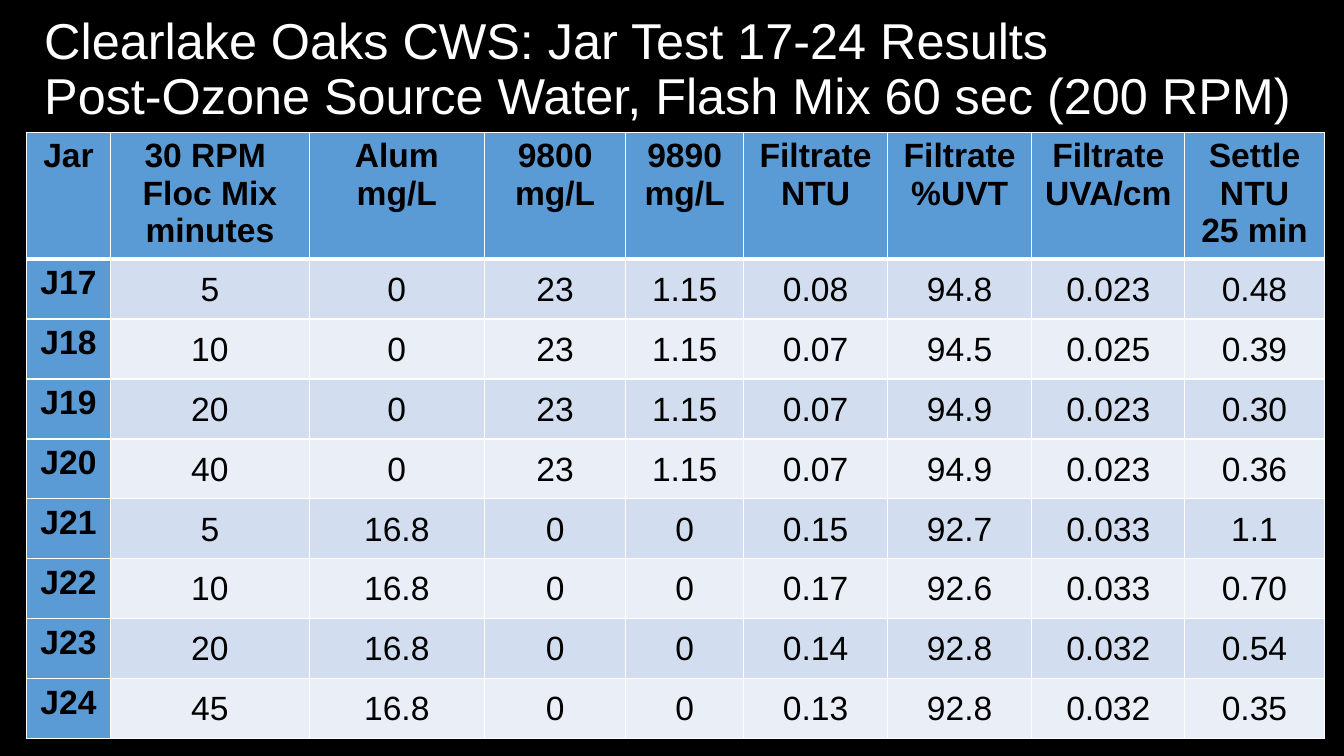
from lxml import etree
from pptx import Presentation
from pptx.dml.color import RGBColor
from pptx.enum.text import MSO_ANCHOR, PP_ALIGN
from pptx.oxml.ns import qn
from pptx.util import Cm, Pt

TITLE_LINES = [
    "Clearlake Oaks CWS: Jar Test 17-24 Results",
    "Post-Ozone Source Water, Flash Mix 60 sec (200 RPM)",
]
HEADERS = [
    ["Jar"],
    ["30 RPM ", "Floc Mix", "minutes"],
    ["Alum", "mg/L"],
    ["9800", "mg/L"],
    ["9890", "mg/L"],
    ["Filtrate", "NTU"],
    ["Filtrate", "%UVT"],
    ["Filtrate", "UVA/cm"],
    ["Settle", "NTU", "25 min"],
]
RESULTS = [
    ["J17", "5", "0", "23", "1.15", "0.08", "94.8", "0.023", "0.48"],
    ["J18", "10", "0", "23", "1.15", "0.07", "94.5", "0.025", "0.39"],
    ["J19", "20", "0", "23", "1.15", "0.07", "94.9", "0.023", "0.30"],
    ["J20", "40", "0", "23", "1.15", "0.07", "94.9", "0.023", "0.36"],
    ["J21", "5", "16.8", "0", "0", "0.15", "92.7", "0.033", "1.1"],
    ["J22", "10", "16.8", "0", "0", "0.17", "92.6", "0.033", "0.70"],
    ["J23", "20", "16.8", "0", "0", "0.14", "92.8", "0.032", "0.54"],
    ["J24", "45", "16.8", "0", "0", "0.13", "92.8", "0.032", "0.35"],
]
COLUMN_WIDTHS = [2.13, 5, 4.42, 3.56, 2.97, 3.63, 3.63, 3.86, 3.51]
HEADER_HEIGHT = 3.2
RESULT_HEIGHT = 1.51

FONT = "Arial"
BLACK = RGBColor(0x00, 0x00, 0x00)
WHITE = RGBColor(0xFF, 0xFF, 0xFF)
HEADER_BLUE = RGBColor(0x5B, 0x9B, 0xD5)
BANDS = [RGBColor(0xD2, 0xDE, 0xEF), RGBColor(0xEA, 0xEF, 0xF7)]
CENTER = PP_ALIGN.CENTER
TOP = MSO_ANCHOR.TOP
MIDDLE = MSO_ANCHOR.MIDDLE


def add_run(paragraph, text, size, color, bold=False):
    run = paragraph.add_run()
    run.text = text
    run.font.name = FONT
    run.font.size = Pt(size)
    run.font.bold = bold
    run.font.color.rgb = color


def set_borders(cell, top_width, bottom_width):
    properties = cell._tc.get_or_add_tcPr()
    widths = [("a:lnL", 1), ("a:lnR", 1), ("a:lnT", top_width), ("a:lnB", bottom_width)]
    for position, (tag, width) in enumerate(widths):
        line = etree.Element(qn(tag), w=str(Pt(width)))
        fill = etree.SubElement(line, qn("a:solidFill"))
        etree.SubElement(fill, qn("a:srgbClr"), val=str(WHITE))
        properties.insert(position, line)


def fill_cell(cell, lines, is_heading, color):
    cell.fill.solid()
    cell.fill.fore_color.rgb = color
    cell.vertical_anchor = TOP if is_heading else MIDDLE
    cell.margin_left = cell.margin_right = Cm(0.25 if is_heading else 0.03)
    cell.margin_top = Cm(0.13 if is_heading else 0.03)
    cell.margin_bottom = Cm(0.13 if is_heading else 0)
    frame = cell.text_frame
    for index, text in enumerate(lines):
        paragraph = frame.add_paragraph() if index else frame.paragraphs[0]
        paragraph.alignment = CENTER
        add_run(paragraph, text, 24, BLACK, is_heading)


def add_title(slide):
    title = slide.shapes.title
    title.left, title.top, title.width, title.height = Cm(0.86), Cm(0.23), Cm(32.26), Cm(3.1)
    title.text_frame.vertical_anchor = MIDDLE
    title.text_frame.word_wrap = True
    paragraph = title.text_frame.paragraphs[0]
    paragraph.alignment = PP_ALIGN.LEFT
    paragraph.line_spacing = 0.9
    for index, text in enumerate(TITLE_LINES):
        if index:
            paragraph.add_line_break()
        add_run(paragraph, text, 36, WHITE)


def add_results_table(slide):
    rows = [HEADERS] + [[[value] for value in result] for result in RESULTS]
    heights = [HEADER_HEIGHT] + [RESULT_HEIGHT] * len(RESULTS)
    table = slide.shapes.add_table(
        len(rows), len(HEADERS), Cm(0.66), Cm(3.33),
        Cm(sum(COLUMN_WIDTHS)), Cm(sum(heights)),
    ).table
    table.first_col = True
    for column, width in zip(table.columns, COLUMN_WIDTHS):
        column.width = Cm(width)
    for row_index, lines_by_column in enumerate(rows):
        table.rows[row_index].height = Cm(heights[row_index])
        for column_index, lines in enumerate(lines_by_column):
            cell = table.cell(row_index, column_index)
            is_heading = row_index == 0 or column_index == 0
            color = HEADER_BLUE if is_heading else BANDS[(row_index - 1) % 2]
            fill_cell(cell, lines, is_heading, color)
            set_borders(cell, 3 if row_index == 1 else 1, 3 if row_index == 0 else 1)


def main():
    presentation = Presentation()
    presentation.slide_width = Cm(33.87)
    presentation.slide_height = Cm(19.05)
    slide = presentation.slides.add_slide(presentation.slide_layouts[5])
    slide.background.fill.solid()
    slide.background.fill.fore_color.rgb = BLACK
    add_title(slide)
    add_results_table(slide)
    presentation.save("out.pptx")


if __name__ == "__main__":
    main()
